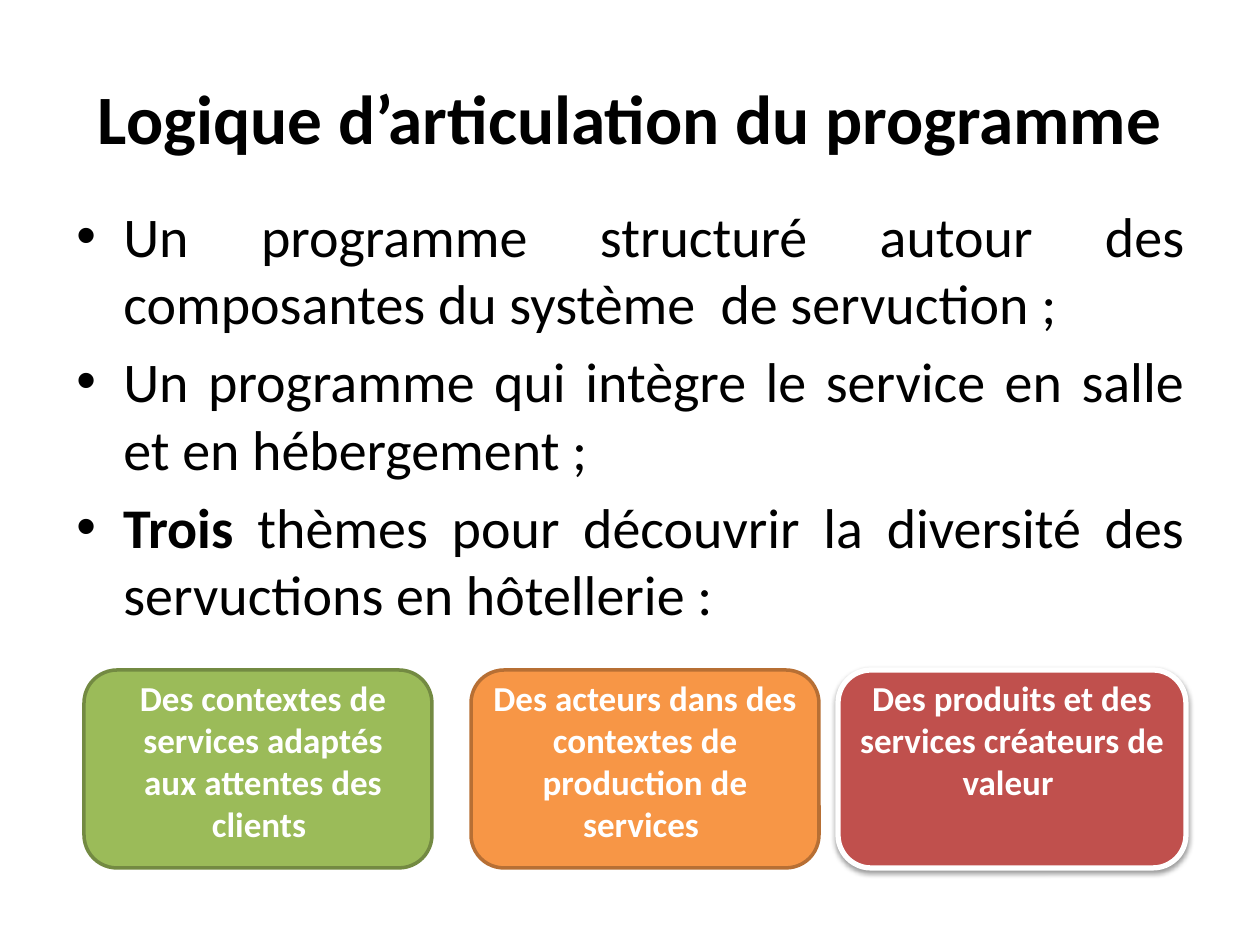
from lxml import etree
from pptx import Presentation
from pptx import util as u
from pptx.dml.color import RGBColor
from pptx.enum import shapes, text
from pptx.oxml import ns

PX = 914400 / 126  # EMU in one px
FONT = "Calibri"
BLACK = RGBColor(0x00, 0x00, 0x00)
WHITE = RGBColor(0xFF, 0xFF, 0xFF)
GREEN = RGBColor(0x9B, 0xBB, 0x59)
MOSS = RGBColor(0x73, 0x8A, 0x42)
ORANGE = RGBColor(0xF7, 0x96, 0x46)
BROWN = RGBColor(0xB7, 0x6F, 0x34)
RED = RGBColor(0xC0, 0x50, 0x4D)

TITLE = "Logique d’articulation du programme"
# Each point is a list of (words, bold) runs
POINTS = [
    [("Un programme structuré autour des composantes du système  de servuction ;", False)],
    [("Un programme qui intègre le service en salle et en hébergement ;", False)],
    [("Trois", True),
     (" thèmes pour découvrir la diversité des servuctions en hôtellerie :", False)],
]
# Left edge, words, left and right text inset, text height, fill, line, line width, shadow
CARDS = [
    (84, "Des contextes de services adaptés aux attentes des clients ",
     20, 10, 183, GREEN, MOSS, 2, False),
    (471, "Des acteurs dans des contextes de production de services ",
     0, 0, 183, ORANGE, BROWN, 2, False),
    (838, "Des produits et des services créateurs de valeur ",
     0, 0, 140, RED, WHITE, 3, True),
]


def emu(*px):
    return [u.Emu(round(n * PX)) for n in px]


def place(shape, box):
    shape.left, shape.top, shape.width, shape.height = emu(*box)


def write(para, runs, size, color=BLACK, align=text.PP_ALIGN.CENTER):
    """Fill a paragraph with (words, bold) runs in one format."""
    para.alignment = align
    for words, bold in runs:
        run = para.add_run()
        run.text = words
        font = run.font
        font.name, font.size, font.bold = FONT, u.Pt(size), bold
        font.color.rgb = color


def add_text(slide, box):
    shape = slide.shapes.add_textbox(*emu(*box))
    shape.text_frame.word_wrap = True
    return shape.text_frame


def bullet(para, indent):
    props = para._p.get_or_add_pPr()
    step = emu(indent)[0]
    props.set("marL", str(step))
    props.set("indent", str(-step))
    etree.SubElement(props, ns.qn("a:buFont"), typeface="Arial")
    etree.SubElement(props, ns.qn("a:buChar"), char="•")


def shade(shape):
    """Soft black shadow straight below the shape."""
    effects = shape._element.spPr.find(ns.qn("a:effectLst"))
    outer = etree.SubElement(effects, ns.qn("a:outerShdw"),
                             blurRad=str(u.Pt(3.1)), dist=str(u.Pt(1.6)),
                             dir="5400000", rotWithShape="0")
    tone = etree.SubElement(outer, ns.qn("a:srgbClr"), val=str(BLACK))
    etree.SubElement(tone, ns.qn("a:alpha"), val="38000")


def head(slide, box):
    title = slide.shapes.title
    place(title, box)
    title.text_frame.vertical_anchor = text.MSO_ANCHOR.MIDDLE
    write(title.text_frame.paragraphs[0], [(TITLE, True)], 39.6)


def points(slide, box):
    frame = add_text(slide, box)
    for i, runs in enumerate(POINTS):
        para = frame.add_paragraph() if i else frame.paragraphs[0]
        para.space_before = u.Pt(6.4)
        bullet(para, 47)
        write(para, runs, 32, align=text.PP_ALIGN.JUSTIFY)


def card(slide, box, words, inl, inr, tall, fill, edge, weight, shadow):
    left, top, wide, _ = box
    shape = slide.shapes.add_shape(shapes.MSO_SHAPE.ROUNDED_RECTANGLE, *emu(*box))
    shape.shadow.inherit = False
    shape.fill.solid()
    shape.fill.fore_color.rgb = fill
    shape.line.color.rgb = edge
    shape.line.width = u.Pt(weight)
    if shadow:
        shade(shape)
    # Label on the card
    frame = add_text(slide, (left + inl, top, wide - inl - inr, tall))
    frame.auto_size = text.MSO_AUTO_SIZE.SHAPE_TO_FIT_TEXT
    write(frame.paragraphs[0], [(words, True)], 20, color=WHITE)


def main():
    deck = Presentation()
    deck.slide_width, deck.slide_height = emu(1260, 945)
    slide = deck.slides.add_slide(deck.slide_layouts[5])  # title only
    head(slide, (63, 38, 1134, 157))
    points(slide, (64, 195, 1134, 624))
    for left, *rest in CARDS:
        card(slide, (left, 670, 348, 198), *rest)
    deck.save("out.pptx")


if __name__ == "__main__":
    main()
